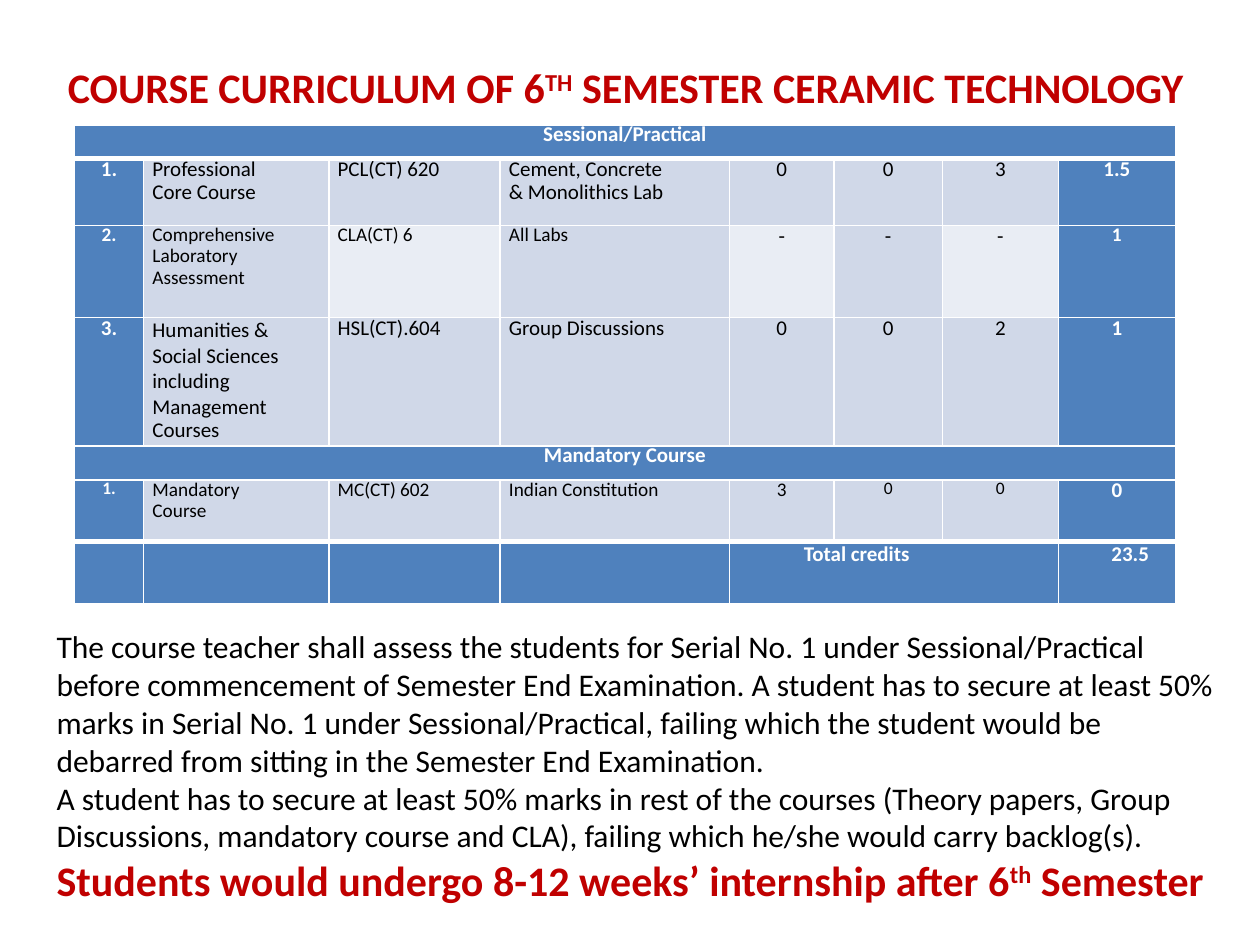
from dataclasses import dataclass

from lxml.etree import SubElement
from pptx import Presentation
from pptx.dml.color import RGBColor
from pptx.enum.text import MSO_ANCHOR, MSO_AUTO_SIZE, PP_ALIGN
from pptx.oxml.ns import qn
from pptx.util import Inches, Pt


@dataclass(frozen=True)
class Theme:
    font: str = "Calibri"
    red: str = "C00000"
    black: str = "000000"
    white: str = "FFFFFF"
    blue: str = "4F81BD"
    band: str = "D0D8E8"
    light: str = "E9EDF4"
    heading: int = 24
    body: int = 18
    cell: int = 12
    small: int = 11
    tiny: int = 10


theme = Theme()


def add_span(para, text, size, color, bold=False, raised=False):
    span = para.add_run()
    span.text = text
    span.font.name = theme.font
    span.font.size = Pt(size)
    span.font.bold = bold
    span.font.color.rgb = RGBColor.from_string(color)
    if raised:
        span._r.get_or_add_rPr().set("baseline", "30000")


def style_cell(cell, fill, thick_sides):
    properties = cell._tc.get_or_add_tcPr()
    for side in ("L", "R", "T", "B"):
        width = Pt(3 if side in thick_sides else 1)
        line = SubElement(properties, qn(f"a:ln{side}"), w=str(width))
        solid = SubElement(line, qn("a:solidFill"))
        SubElement(solid, qn("a:srgbClr"), val=theme.white)
    cell.fill.solid()
    cell.fill.fore_color.rgb = RGBColor.from_string(fill)
    cell.margin_left = cell.margin_right = 0
    cell.margin_top = cell.margin_bottom = 0


deck = Presentation()
deck.slide_width, deck.slide_height = Inches(10), Inches(7.5)
slide = deck.slides.add_slide(deck.slide_layouts[5])

# Title
title = slide.shapes.title
title.left, title.top = Inches(0.12), Inches(0.44)
title.width, title.height = Inches(9.69), Inches(0.81)
frame = title.text_frame
frame.word_wrap = True
frame.auto_size = MSO_AUTO_SIZE.NONE
frame.vertical_anchor = MSO_ANCHOR.TOP
para = frame.paragraphs[0]
para.alignment = PP_ALIGN.CENTER
for text, raised in (("COURSE CURRICULUM OF 6", False), ("TH", True),
                     (" SEMESTER CERAMIC TECHNOLOGY", False)):
    add_span(para, text, theme.heading, theme.red, True, raised)

# Curriculum table: section rows hold one label, the last row holds the total
columns = [0.55, 1.47, 1.36, 1.82, 0.83, 0.86, 0.92, 0.93]
heights = [0.27, 0.53, 0.73, 1.02, 0.27, 0.49, 0.49]
rows = [
    ["Sessional/Practical"],
    ["1.", "Professional\nCore Course", "PCL(CT) 620",
     "Cement, Concrete\n& Monolithics Lab", "0", "0", "3", "1.5"],
    ["2.", "Comprehensive\nLaboratory Assessment", "CLA(CT) 6", "All Labs",
     "-", "-", "-", "1"],
    ["3.", "Humanities & Social Sciences including Management\nCourses",
     "HSL(CT).604", "Group Discussions", "0", "0", "2", "1"],
    ["Mandatory Course"],
    ["1.", "Mandatory\nCourse", "MC(CT) 602", "Indian Constitution",
     "3", "0", "0", "0"],
    ["", "", "", "", "Total credits", "", "", "23.5"],
]
last_row, last_column = len(rows) - 1, len(columns) - 1
sizes = {(5, 0): theme.tiny, (5, 5): theme.tiny, (5, 6): theme.tiny,
         (5, 7): theme.cell}
sizes.update({(2, column): theme.cell for column in (4, 5, 6)})
thick = {0: "B", 1: "T", last_row - 1: "B", last_row: "T"}

table = slide.shapes.add_table(len(rows), len(columns), Inches(0.59), Inches(0.99),
                               Inches(sum(columns)), Inches(sum(heights))).table
for column, width in zip(table.columns, columns):
    column.width = Inches(width)
for row, height in zip(table.rows, heights):
    row.height = Inches(height)

for r, labels in enumerate(rows):
    section, total = len(labels) == 1, r == last_row
    for c in range(len(columns)):
        cell = table.cell(r, c)
        dark = section or total or c in (0, last_column)
        light = r == 2 and c in (2, 4, 6)
        fill = theme.blue if dark else theme.light if light else theme.band
        style_cell(cell, fill, thick.get(r, ""))
        if c >= len(labels) or not labels[c]:
            continue
        size = sizes.get((r, c), theme.small if r in (2, 5) else theme.cell)
        for number, text in enumerate(labels[c].split("\n")):
            box = cell.text_frame
            para = box.add_paragraph() if number else box.paragraphs[0]
            if total:
                para.alignment = PP_ALIGN.RIGHT if c == last_column else PP_ALIGN.LEFT
                cell.margin_left = Inches(0.59 if c < last_column else 0)
                cell.margin_right = Inches(0.21 if c == last_column else 0)
            elif section or c not in (1, 2, 3):
                para.alignment = PP_ALIGN.CENTER
            else:
                cell.margin_left = Inches(0.07)
                cell.margin_right = Inches(0.2)
            if not total and len(text) < 30:
                para.line_spacing = Pt(12.9 if section else round(size * 1.11, 1))
            add_span(para, text, size, theme.white if dark else theme.black, dark)
    if section:
        table.cell(r, 0).merge(table.cell(r, last_column))
    elif total:
        table.cell(r, 4).merge(table.cell(r, last_column - 1))

# Assessment rules and internship note
box = slide.shapes.add_textbox(Inches(0.35), Inches(4.93), Inches(9.45), Inches(2.5))
frame = box.text_frame
frame.word_wrap = True
rules = [
    "The course teacher shall assess the students for Serial No. 1 under "
    "Sessional/Practical before commencement of Semester End Examination. "
    "A student has to secure at least 50% marks in Serial No. 1 under "
    "Sessional/Practical, failing which the student would be debarred from "
    "sitting in the Semester End Examination.",
    "A student has to secure at least 50% marks in rest of the courses "
    "(Theory papers, Group Discussions, mandatory course and CLA), failing "
    "which he/she would carry backlog(s).",
]
for number, text in enumerate(rules):
    para = frame.add_paragraph() if number else frame.paragraphs[0]
    add_span(para, text, theme.body, theme.black)
para = frame.add_paragraph()
for text, raised in (("Students would undergo 8-12 weeks’ internship after 6", False),
                     ("th", True), (" Semester", False)):
    add_span(para, text, theme.heading, theme.red, True, raised)

deck.save("out.pptx")
